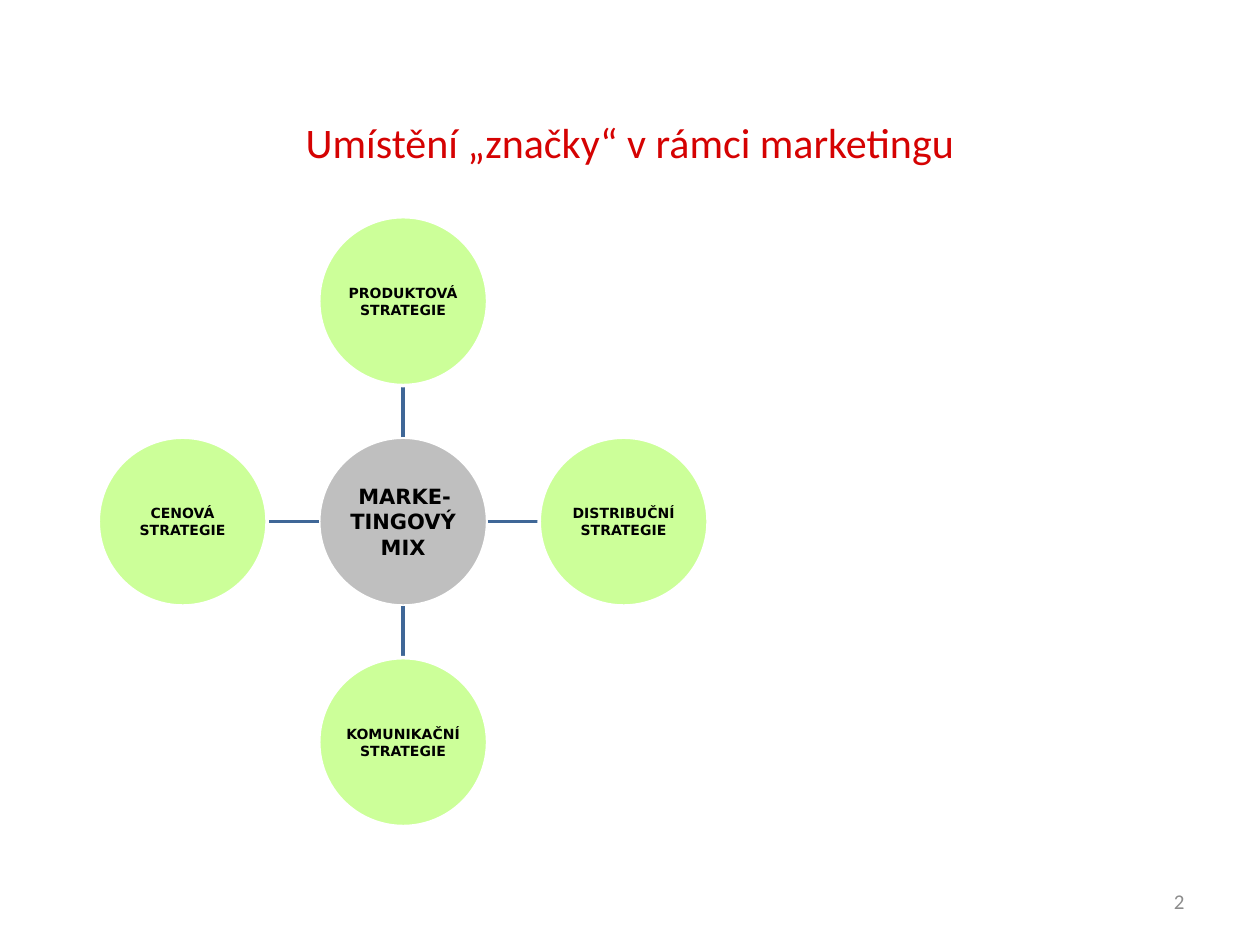
from lxml.etree import SubElement
from pptx import Presentation
from pptx.dml.color import RGBColor
from pptx.enum.shapes import MSO_CONNECTOR, MSO_SHAPE
from pptx.enum.text import MSO_ANCHOR, PP_ALIGN
from pptx.oxml.ns import qn
from pptx.util import Pt

PX = 9144
COLORS = {
    "title": "D50202", "hub": "BFBFBF", "node": "CCFF99",
    "edge": "FFFFFF", "link": "3F6797", "text": "000000", "page": "8C8C8C",
}


class Deck:
    def __init__(self, wide, high):
        self.show = Presentation()
        self.show.slide_width = wide * PX
        self.show.slide_height = high * PX
        self.slide = self.show.slides.add_slide(self.show.slide_layouts[6])

    def color(self, name):
        return RGBColor.from_string(COLORS[name])

    def line(self, shape, name):
        shape.line.color.rgb = self.color(name)
        shape.line.width = Pt(2)

    def label(self, shape, lines, color, align, form, inset=None):
        frame = shape.text_frame
        frame.word_wrap = True
        frame.vertical_anchor = MSO_ANCHOR.MIDDLE
        if inset is not None:
            for side in ("left", "top", "right", "bottom"):
                setattr(frame, f"margin_{side}", inset * PX)
        frame.text = "\n".join(lines)
        for para in frame.paragraphs:
            para.alignment = align
            for key, value in form.items():
                setattr(para.font, key, value)
            para.font.color.rgb = self.color(color)

    def text(self, box, words, color, align, size):
        shape = self.slide.shapes.add_textbox(*(n * PX for n in box))
        form = {"name": "Calibri", "size": Pt(size)}
        self.label(shape, [words], color, align, form)

    def disc(self, x, y, width, lines, fill, size):
        box = (x - width // 2, y - width // 2, width, width)
        shape = self.slide.shapes.add_shape(MSO_SHAPE.OVAL, *(n * PX for n in box))
        shape.shadow.inherit = False
        shape.fill.solid()
        shape.fill.fore_color.rgb = self.color(fill)
        self.line(shape, "edge")
        form = {"name": "DejaVu Sans", "size": Pt(size), "bold": True}
        self.label(shape, lines, "text", PP_ALIGN.CENTER, form, inset=1)

    def link(self, *ends):
        wire = self.slide.shapes.add_connector(
            MSO_CONNECTOR.STRAIGHT, *(n * PX for n in ends))
        self.line(wire, "link")
        SubElement(wire._element.spPr, qn("a:effectLst"))


def main():
    deck = Deck(1000, 750)
    deck.text((50, 70, 900, 85), "Umístění „značky“ v rámci marketingu",
              "title", PP_ALIGN.CENTER, 24)

    x, y, width, step = 320, 414, 134, 175
    near, far = width // 2, step - width // 2
    deck.disc(x, y, width, ["MARKE-TINGOVÝ MIX"], "hub", 12)
    nodes = [
        (0, -1, ["PRODUKTOVÁ", "STRATEGIE"]),
        (1, 0, ["DISTRIBUČNÍ STRATEGIE"]),
        (0, 1, ["KOMUNIKAČNÍ", "STRATEGIE"]),
        (-1, 0, ["CENOVÁ", "STRATEGIE"]),
    ]
    for dx, dy, lines in nodes:
        deck.link(x + dx * near, y + dy * near, x + dx * far, y + dy * far)
        deck.disc(x + dx * step, y + dy * step, width, lines, "node", 8)

    deck.text((717, 695, 233, 40), "2", "page", PP_ALIGN.RIGHT, 12)
    deck.show.save("out.pptx")


if __name__ == "__main__":
    main()
